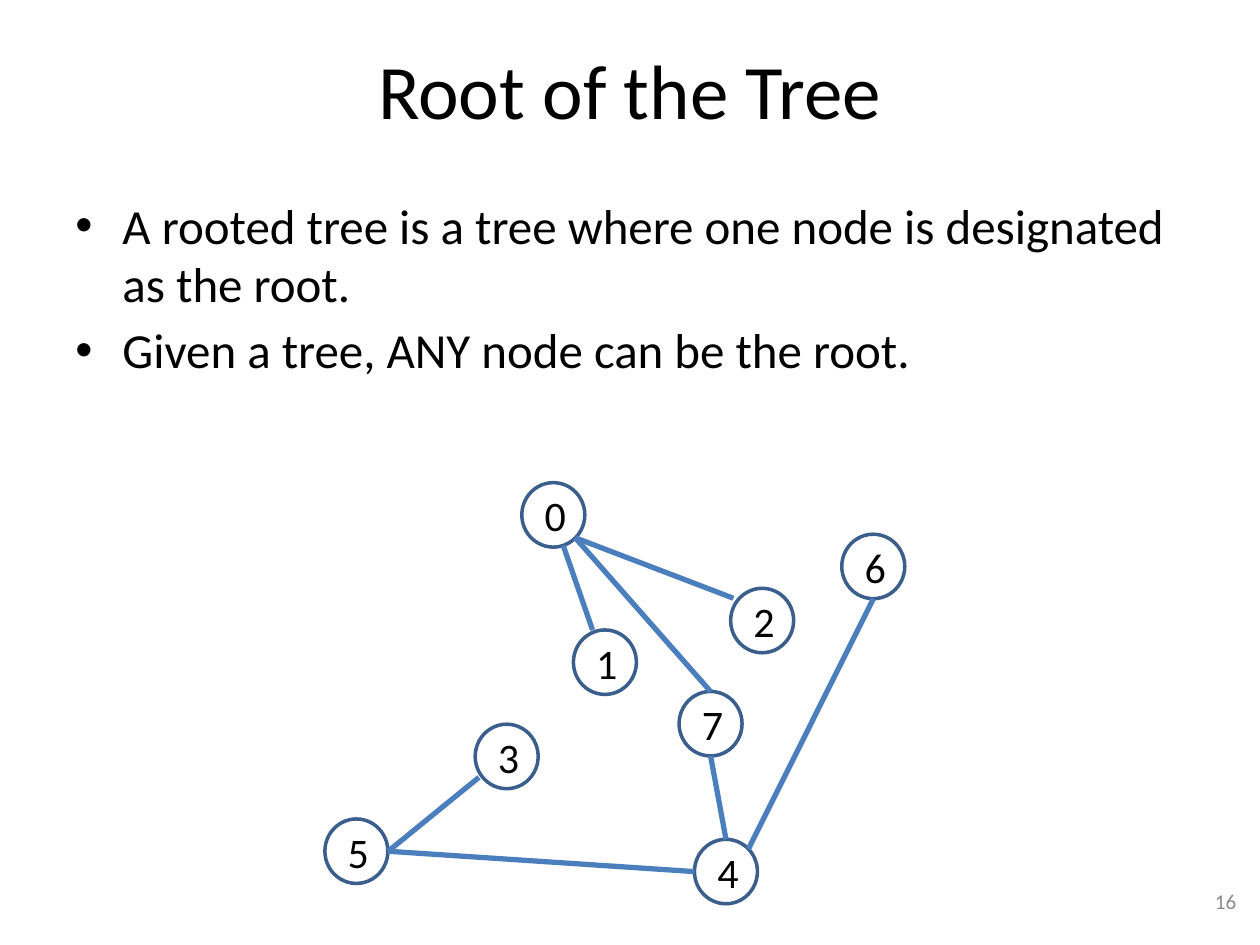
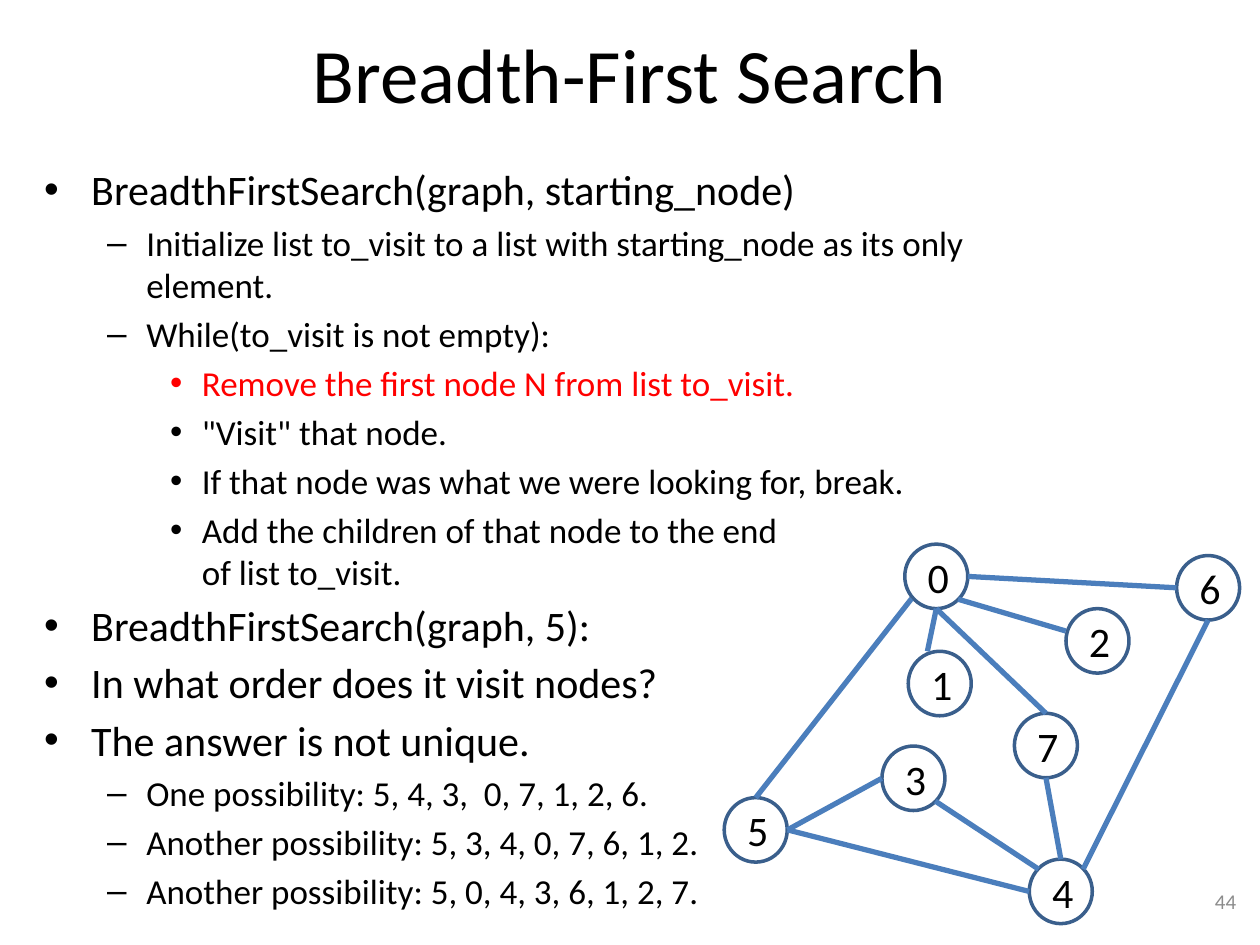
from dataclasses import dataclass
from enum import Enum

from lxml.etree import SubElement
from pptx import Presentation
from pptx.dml.color import RGBColor
from pptx.enum.shapes import MSO_CONNECTOR, MSO_SHAPE
from pptx.enum.text import MSO_ANCHOR, PP_ALIGN
from pptx.oxml.ns import qn
from pptx.util import Cm, Pt

FONT = "Calibri"
BLACK, RED, GREY = "000000", "FF0000", "8C8C8C"
NODE_OUTLINE, EDGE_COLOUR = "3A5F8C", "4B7EBC"
NODE_WIDTH, NODE_HEIGHT = 1.27, 1.3


@dataclass(frozen=True)
class Box:
    left: float
    top: float
    width: float
    height: float

    def lengths(self) -> tuple:
        return Cm(self.left), Cm(self.top), Cm(self.width), Cm(self.height)


@dataclass(frozen=True)
class Level:
    symbol: str
    indent: float
    hanging: float


@dataclass(frozen=True)
class Bullet:
    text: str
    level: int = 0
    colour: str = BLACK


class Port(Enum):
    """Places on a node's rim, as cm offsets from its centre."""
    TOP = (0, -0.65)
    RIGHT = (0.64, 0)
    BOTTOM = (0, 0.65)
    LEFT = (-0.64, 0)
    TOP_LEFT = (-0.45, -0.45)
    TOP_RIGHT = (0.45, -0.45)
    BOTTOM_LEFT = (-0.5, 0.45)
    BOTTOM_RIGHT = (0.44, 0.46)
    TOP_NEAR_LEFT = (-0.25, -0.65)
    BOTTOM_NEAR_RIGHT = (0.2, 0.62)
    LEFT_NEAR_TOP = (-0.64, -0.2)
    OUTER_TOP_LEFT = (-0.58, -0.45)
    OUTER_BOTTOM_LEFT = (-0.56, 0.42)


@dataclass(frozen=True)
class Edge:
    start: int
    start_port: Port
    end: int
    end_port: Port


@dataclass(frozen=True)
class Lesson:
    title: str
    title_height: float
    body: Box
    body_sizes: tuple[int, ...]
    bullets: list[Bullet]
    nodes: dict[int, tuple[float, float]]
    edges: list[Edge]
    number: int


LEVELS = [Level("•", 0.95, 0.95), Level("–", 2.06, 0.79), Level("•", 3.18, 0.64)]
NUMBER_BOX = Box(19.25, 17.65, 5.92, 1.02)

ROOT_OF_TREE = Lesson(
    title="Root of the Tree",
    title_height=3.18,
    body=Box(1.27, 3.81, 22.86, 13.97),
    body_sizes=(28,),
    bullets=[
        Bullet("A rooted tree is a tree where one node is designated as the root."),
        Bullet("Given a tree, ANY node can be the root."),
    ],
    nodes={
        0: (10.52, 9.73), 1: (11.56, 12.7), 7: (13.69, 13.94), 2: (14.73, 11.86),
        5: (6.55, 16.51), 3: (9.58, 14.6), 4: (14, 16.92), 6: (16.97, 10.77),
    },
    edges=[
        Edge(0, Port.BOTTOM_RIGHT, 2, Port.OUTER_TOP_LEFT),
        Edge(0, Port.BOTTOM_NEAR_RIGHT, 1, Port.TOP_NEAR_LEFT),
        Edge(0, Port.BOTTOM_RIGHT, 7, Port.TOP),
        Edge(5, Port.RIGHT, 3, Port.OUTER_BOTTOM_LEFT),
        Edge(5, Port.RIGHT, 4, Port.LEFT),
        Edge(7, Port.BOTTOM, 4, Port.TOP),
        Edge(6, Port.BOTTOM, 4, Port.TOP_RIGHT),
    ],
    number=16,
)

BREADTH_FIRST = Lesson(
    title="Breadth-First Search",
    title_height=2.54,
    body=Box(0.64, 3.18, 20.85, 13.97),
    body_sizes=(24, 20, 20),
    bullets=[
        Bullet("BreadthFirstSearch(graph, starting_node)"),
        Bullet("Initialize list to_visit to a list with starting_node as its only element.", 1),
        Bullet("While(to_visit is not empty):", 1),
        Bullet("Remove the first node N from list to_visit.", 2, RED),
        Bullet('"Visit" that node.', 2),
        Bullet("If that node was what we were looking for, break.", 2),
        Bullet("Add the children of that node to the end \vof list to_visit.", 2),
        Bullet("BreadthFirstSearch(graph, 5):"),
        Bullet("In what order does it visit nodes?"),
        Bullet("The answer is not unique."),
        Bullet("One possibility: 5, 4, 3,  0, 7, 1, 2, 6.", 1),
        Bullet("Another possibility: 5, 3, 4, 0, 7, 6, 1, 2.", 1),
        Bullet("Another possibility: 5, 0, 4, 3, 6, 1, 2, 7.", 1),
    ],
    nodes={
        0: (18.24, 10.97), 1: (18.31, 13.13), 7: (20.45, 14.38), 2: (21.49, 12.27),
        5: (14.6, 16.08), 3: (17.78, 15.04), 4: (20.75, 17.32), 6: (23.72, 11.2),
    },
    edges=[
        Edge(0, Port.RIGHT, 6, Port.LEFT),
        Edge(0, Port.BOTTOM_RIGHT, 2, Port.LEFT_NEAR_TOP),
        Edge(0, Port.BOTTOM, 1, Port.TOP_NEAR_LEFT),
        Edge(0, Port.BOTTOM_LEFT, 5, Port.TOP),
        Edge(0, Port.BOTTOM, 7, Port.TOP),
        Edge(5, Port.RIGHT, 3, Port.LEFT),
        Edge(5, Port.RIGHT, 4, Port.LEFT),
        Edge(3, Port.BOTTOM_RIGHT, 4, Port.TOP_LEFT),
        Edge(7, Port.BOTTOM, 4, Port.TOP),
        Edge(6, Port.BOTTOM, 4, Port.TOP_RIGHT),
    ],
    number=44,
)


def rgb(colour: str) -> RGBColor:
    return RGBColor.from_string(colour)


def format_runs(paragraph, size: int, colour: str) -> None:
    for run in paragraph.runs:
        run.font.name = FONT
        run.font.size = Pt(size)
        run.font.color.rgb = rgb(colour)


def add_line_of_text(slide, text: str, box: Box, size: int, colour: str,
                     alignment: PP_ALIGN) -> None:
    frame = slide.shapes.add_textbox(*box.lengths()).text_frame
    frame.word_wrap = True
    frame.vertical_anchor = MSO_ANCHOR.MIDDLE
    frame.text = text
    frame.paragraphs[0].alignment = alignment
    format_runs(frame.paragraphs[0], size, colour)


def set_bullet(paragraph, level: Level) -> None:
    properties = paragraph._p.get_or_add_pPr()
    properties.set("marL", str(Cm(level.indent)))
    properties.set("indent", str(-Cm(level.hanging)))
    SubElement(properties, qn("a:buFont"), typeface="Arial")
    SubElement(properties, qn("a:buChar"), char=level.symbol)


def add_body(slide, lesson: Lesson) -> None:
    frame = slide.shapes.add_textbox(*lesson.body.lengths()).text_frame
    frame.word_wrap = True
    for index, bullet in enumerate(lesson.bullets):
        paragraph = frame.add_paragraph() if index else frame.paragraphs[0]
        paragraph.text = bullet.text
        paragraph.level = bullet.level
        paragraph.space_before = Pt(4)
        set_bullet(paragraph, LEVELS[bullet.level])
        format_runs(paragraph, lesson.body_sizes[bullet.level], bullet.colour)


def add_node(slide, label: int, left: float, top: float):
    box = Box(left, top, NODE_WIDTH, NODE_HEIGHT)
    node = slide.shapes.add_shape(MSO_SHAPE.OVAL, *box.lengths())
    node.shadow.inherit = False
    node.fill.background()
    node.line.color.rgb = rgb(NODE_OUTLINE)
    node.line.width = Pt(2)
    frame = node.text_frame
    frame.word_wrap = False
    frame.vertical_anchor = MSO_ANCHOR.MIDDLE
    frame.margin_left = Cm(0.08)
    frame.margin_right = frame.margin_top = frame.margin_bottom = 0
    frame.text = str(label)
    frame.paragraphs[0].alignment = PP_ALIGN.CENTER
    format_runs(frame.paragraphs[0], 24, BLACK)
    return node


def port_position(node, port: Port) -> tuple[int, int]:
    across, down = port.value
    return (node.left + node.width // 2 + Cm(across),
            node.top + node.height // 2 + Cm(down))


def add_edge(slide, edge: Edge, nodes: dict) -> None:
    start, end = nodes[edge.start], nodes[edge.end]
    line = slide.shapes.add_connector(
        MSO_CONNECTOR.STRAIGHT,
        *port_position(start, edge.start_port), *port_position(end, edge.end_port))
    if edge.end_port is Port.TOP:
        line.end_connect(end, 0)
    line.line.color.rgb = rgb(EDGE_COLOUR)
    line.line.width = Pt(3)
    SubElement(line._element.spPr, qn("a:effectLst"))


def add_lesson(presentation, lesson: Lesson) -> None:
    slide = presentation.slides.add_slide(presentation.slide_layouts[6])
    title_box = Box(1.27, 0.2, 22.86, lesson.title_height)
    add_line_of_text(slide, lesson.title, title_box, 44, BLACK, PP_ALIGN.CENTER)
    add_body(slide, lesson)
    add_line_of_text(slide, str(lesson.number), NUMBER_BOX, 12, GREY, PP_ALIGN.RIGHT)
    nodes = {label: add_node(slide, label, *corner)
             for label, corner in lesson.nodes.items()}
    for edge in lesson.edges:
        add_edge(slide, edge, nodes)


def main() -> None:
    presentation = Presentation()
    presentation.slide_width = Cm(25.4)
    presentation.slide_height = Cm(19.05)
    for lesson in (ROOT_OF_TREE, BREADTH_FIRST):
        add_lesson(presentation, lesson)
    presentation.save("out.pptx")


if __name__ == "__main__":
    main()
